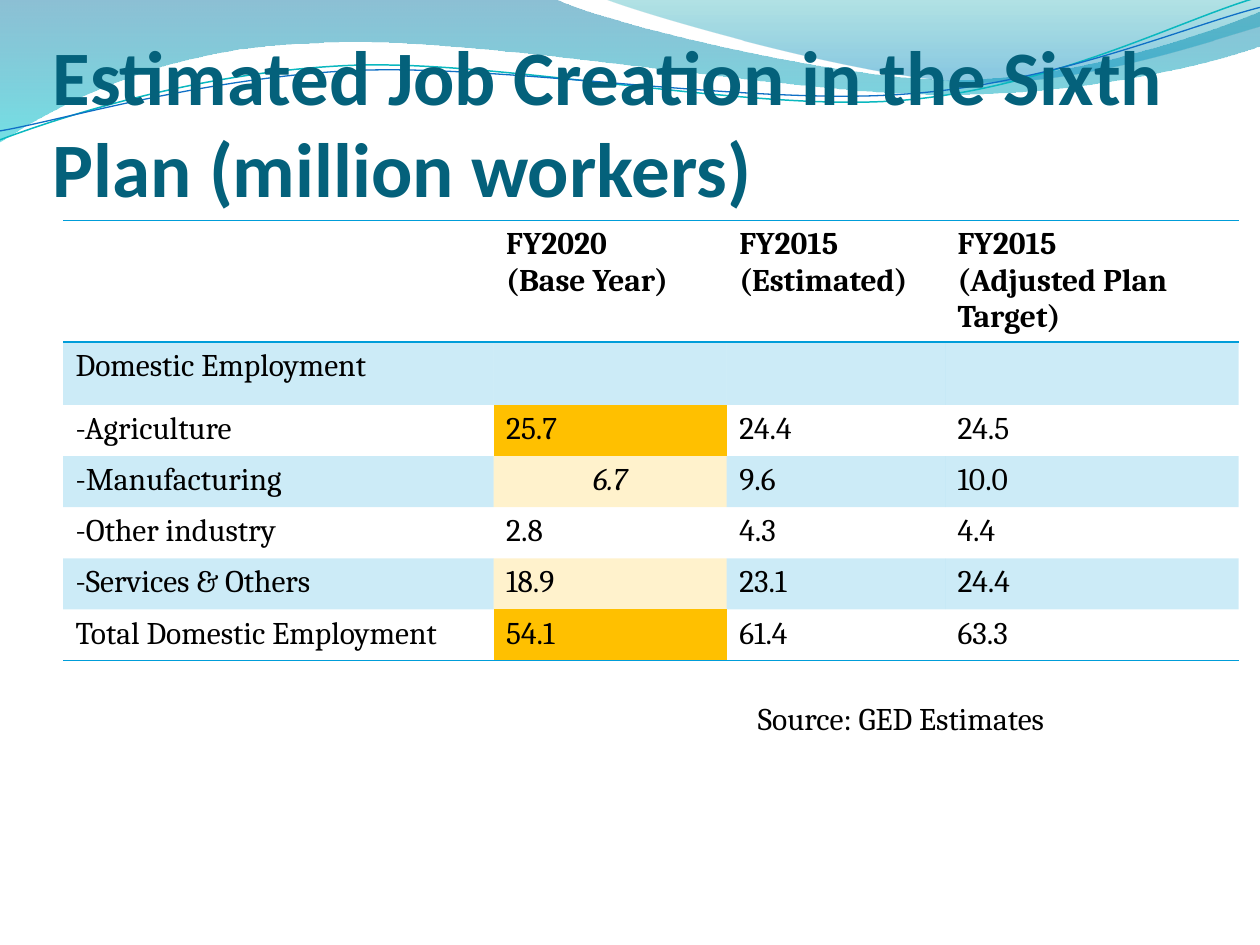
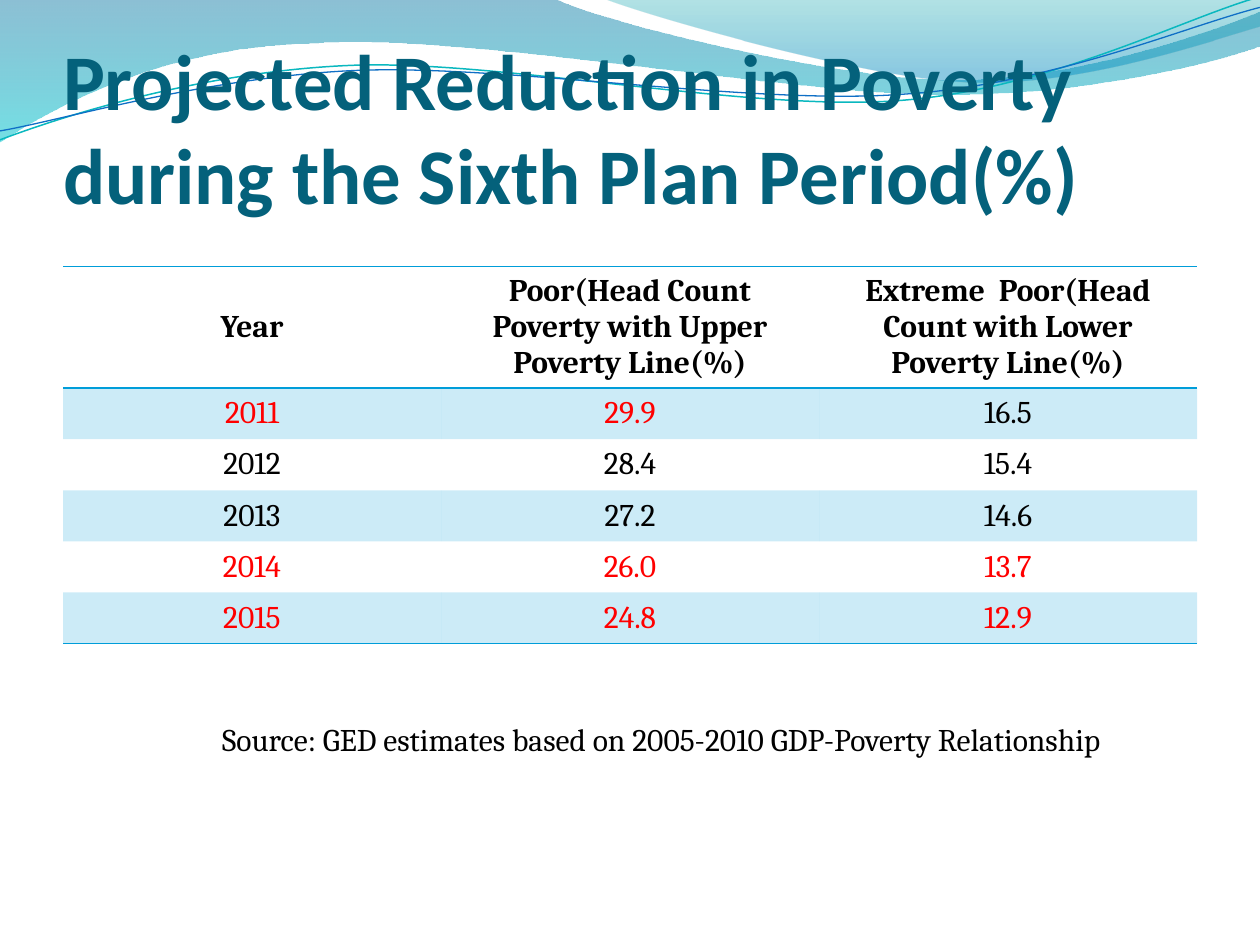
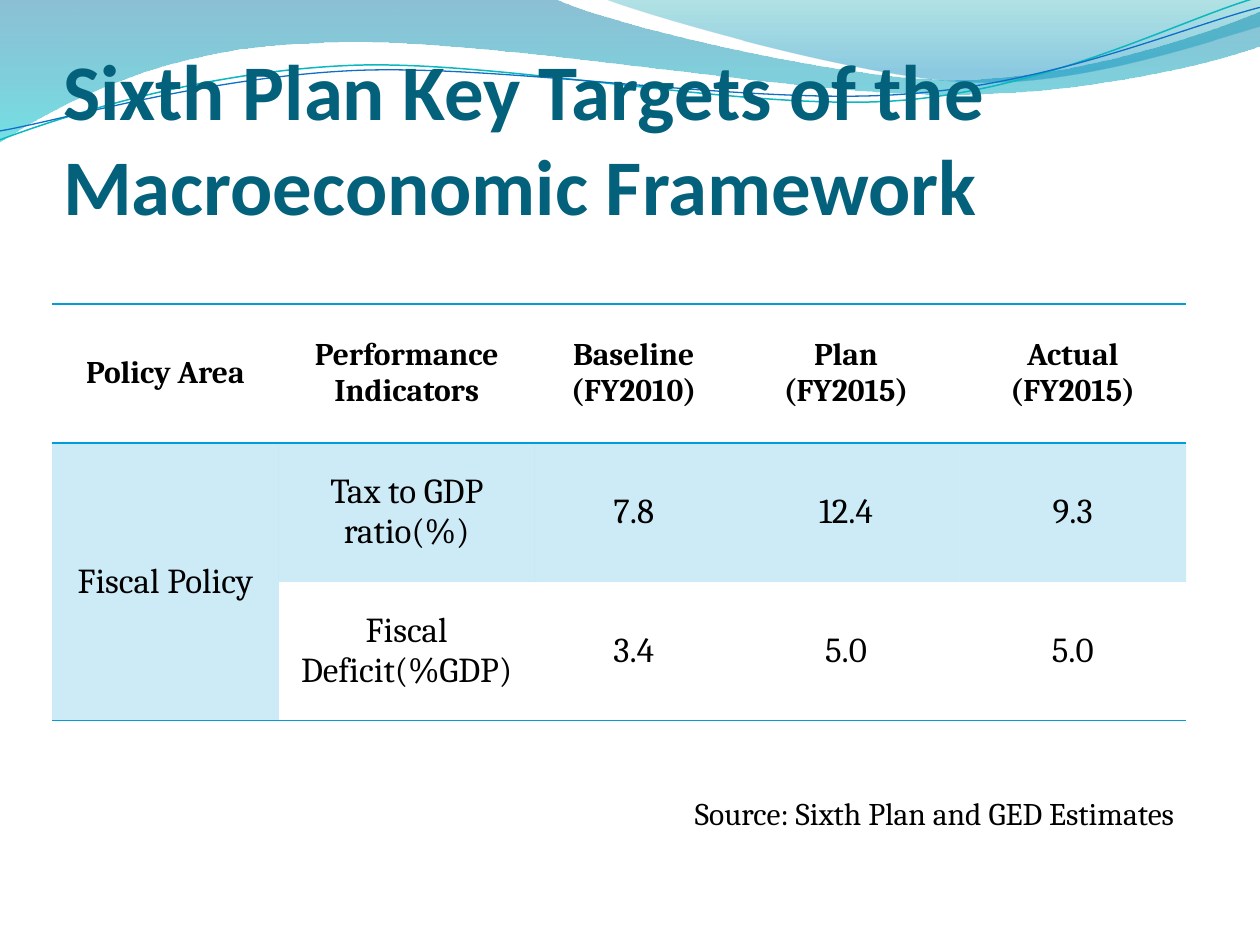
from dataclasses import dataclass

from lxml import etree
from pptx import Presentation
from pptx.dml.color import RGBColor
from pptx.enum.text import MSO_ANCHOR, MSO_AUTO_SIZE, PP_ALIGN
from pptx.oxml.ns import qn
from pptx.util import Cm, Pt

LEFT, MID = PP_ALIGN.LEFT, PP_ALIGN.CENTER
TOP, HALF, LOW = MSO_ANCHOR.TOP, MSO_ANCHOR.MIDDLE, MSO_ANCHOR.BOTTOM
FIXED, GROW = MSO_AUTO_SIZE.NONE, MSO_AUTO_SIZE.SHAPE_TO_FIT_TEXT

BLACK = RGBColor(0x00, 0x00, 0x00)
RED = RGBColor(0xFF, 0x00, 0x00)
GOLD = RGBColor(0xFF, 0xC0, 0x00)
SKY = RGBColor(0x00, 0x9D, 0xD9)
INK = RGBColor(0x04, 0x61, 0x7B)
BLUE = RGBColor(0x00, 0x74, 0xA1)
AQUA = RGBColor(0x00, 0xC6, 0xCF)
SEA = RGBColor(0x00, 0xA1, 0xA9)
AZURE = RGBColor(0x00, 0x8B, 0xBF)
TEAL = RGBColor(0x0A, 0xB8, 0xBF)
NAVY = RGBColor(0x0F, 0x6F, 0xC6)

HEAD_FONT, BODY_FONT = "Calibri", "Cambria"
PLAIN_GRID = "{2D5ABB26-0587-4C30-8999-92F81FD0307C}"
TINT = 20  # opacity of banded rows, in percent

Point = tuple[float, float]
Spot = tuple[int, int]


@dataclass
class Stop:
    place: float
    color: RGBColor
    alpha: int


@dataclass
class Wave:
    """A curve in cm; a step of one point is a line, of three a Bézier."""
    start: Point
    steps: list[tuple[Point, ...]]
    stops: tuple[Stop, ...] = ()
    color: RGBColor = BLACK
    width: float = 0


@dataclass
class Grid:
    left: float
    top: float
    cols: list[float]
    rows: list[float]
    text: list[list[str]]
    align: PP_ALIGN = MID
    anchor: MSO_ANCHOR = TOP
    size: int = 18
    red: tuple[Spot, ...] = ()
    gold: tuple[Spot, ...] = ()
    slant: tuple[Spot, ...] = ()
    merge: tuple[Spot, ...] = ()


@dataclass
class Page:
    title: str
    box: tuple[float, float, float, float]
    size: int
    grid: Grid
    note: str
    note_box: tuple[float, float, float, float]


WAVES = [
    Wave((0, 0), [
        ((11.18, -0.03),),
        ((12.09, 0.43), (16.87, 1.6), (19.25, 1.6)),
        ((21.67, 1.6), (24.33, 0.66), (25.4, 0.23)),
        ((25.43, 0.91),),
        ((24.97, 1.12), (22.1, 1.93), (18.95, 1.9)),
        ((15.8, 1.9), (9.7, 0.71), (6.53, 0.86)),
        ((3.28, 0.91), (1.17, 2.11), (-0.03, 2.87)),
        ((0, 0),),
    ], stops=(Stop(0, BLUE, 45), Stop(1, AQUA, 55))),
    Wave((12.17, -0.03), [
        ((12.93, 0.28), (17.32, 1.57), (19.53, 1.65)),
        ((21.74, 1.75), (24.41, 0.81), (25.4, 0.53)),
        ((25.4, 0),),
        ((12.17, -0.03),),
    ], stops=(Stop(0, SEA, 30), Stop(0.8, AZURE, 45))),
    Wave((0, 2.82), [
        ((1.22, 2.36), (4.01, 1.45), (7.04, 1.32)),
        ((10.03, 1.19), (15.06, 2.26), (18.11, 2.03)),
        ((21.16, 1.8), (23.83, 0.38), (25.35, -0.05)),
    ], color=TEAL, width=0.85),
    Wave((0, 2.64), [
        ((1.19, 2.44), (4.17, 1.55), (7.19, 1.42)),
        ((10.24, 1.3), (15.16, 2.13), (18.21, 1.9)),
        ((21.23, 1.7), (23.9, 0.53), (25.4, 0.15)),
    ], color=NAVY, width=0.75),
]

PAGES = [
    Page(
        "Estimated Job Creation in the Sixth Plan (million workers)",
        (1.06, 0.64, 22.86, 3.65), 44,
        Grid(1.27, 4.44, [8.68, 4.7, 4.4, 5.92], [1.03, 1.27] + [1.03] * 5, [
            ["", "FY2020\n(Base Year)", "FY2015\n(Estimated)",
             "FY2015\n(Adjusted Plan Target)"],
            ["Domestic Employment", "", "", ""],
            ["-Agriculture", "25.7", "24.4", "24.5"],
            ["-Manufacturing", "6.7", "9.6", "10.0"],
            ["-Other industry", "2.8", "4.3", "4.4"],
            ["-Services & Others", "18.9", "23.1", "24.4"],
            ["Total Domestic Employment", "54.1", "61.4", "63.3"],
        ], align=LEFT, gold=((2, 1), (3, 1), (5, 1), (6, 1)),
            slant=((3, 1),)),
        "Source: GED Estimates", (15.03, 13.97, 6.86, 1.03)),
    Page(
        "Projected Reduction in Poverty during the Sixth Plan Period(%)",
        (1.27, 0.64, 22.86, 3.81), 45,
        Grid(1.27, 5.37, [7.62] * 3, [1.03] * 6, [
            ["Year", "Poor(Head Count Poverty with Upper Poverty Line(%)",
             "Extreme  Poor(Head Count with Lower Poverty Line(%)"],
            ["2011", "29.9", "16.5"],
            ["2012", "28.4", "15.4"],
            ["2013", "27.2", "14.6"],
            ["2014", "26.0", "13.7"],
            ["2015", "24.8", "12.9"],
        ], anchor=HALF, red=((1, 0), (1, 1), (4, 0), (4, 1), (4, 2),
                             (5, 0), (5, 1), (5, 2))),
        "Source: GED estimates based on 2005-2010 GDP-Poverty Relationship",
        (4.23, 14.4, 19.68, 1.03)),
    Page(
        "Sixth Plan Key Targets of the Macroeconomic Framework",
        (1.27, 0.85, 23.29, 3.81), 45,
        Grid(1.05, 6.13, [4.57, 5.16, 3.99, 4.57, 4.57], [2.8] * 3, [
            ["Policy Area", "Performance Indicators", "Baseline\n(FY2010)",
             "Plan\n(FY2015)", "Actual\n(FY2015)"],
            ["Fiscal Policy", "Tax to GDP ratio(%)", "7.8", "12.4", "9.3"],
            ["", "Fiscal Deficit(%GDP)", "3.4", "5.0", "5.0"],
        ], anchor=HALF, size=20, merge=((1, 0), (2, 0))),
        "Source: Sixth Plan and GED Estimates", (13.76, 15.88, 11, 1.03)),
]


# Text and colour helpers
def write(frame, text: str, size: int, color: RGBColor = BLACK,
          font: str = BODY_FONT, bold: bool = False, slant: bool = False,
          align: PP_ALIGN = LEFT) -> None:
    for i, line in enumerate(text.split("\n")):
        para = frame.add_paragraph() if i else frame.paragraphs[0]
        para.alignment = align
        run = para.add_run()
        run.text = line
        run.font.name, run.font.size = font, Pt(size)
        run.font.bold, run.font.italic = bold, slant
        run.font.color.rgb = color


def fade(node, alphas: list[int]) -> None:
    for color, alpha in zip(node.iter(qn("a:srgbClr")), alphas):
        etree.SubElement(color, qn("a:alpha"), val=str(alpha * 1000))


def rule(props, side: str) -> None:
    line = etree.Element(qn(f"a:{side}"), w=str(Pt(1)))
    solid = etree.SubElement(line, qn("a:solidFill"))
    etree.SubElement(solid, qn("a:srgbClr"), val=str(SKY))
    props.insert(0, line)


# Waves shared by all slides, kept on the master
def bend(shape, wave: Wave) -> None:
    """Join the line pieces of each three-point step into one curve."""
    lines = iter(list(shape.element.iter(qn("a:lnTo"))))
    for step in wave.steps:
        parts = [next(lines) for _ in step]
        if len(parts) == 3:
            curve = etree.Element(qn("a:cubicBezTo"))
            parts[0].addprevious(curve)
            for part in parts:
                curve.append(part[0])
                part.getparent().remove(part)


def draw_wave(slide, master, wave: Wave) -> None:
    pen = slide.shapes.build_freeform(*map(Cm, wave.start))
    pen.add_line_segments(
        [(Cm(x), Cm(y)) for step in wave.steps for x, y in step],
        close=bool(wave.stops))
    shape = pen.convert_to_shape()
    bend(shape, wave)
    shape.shadow.inherit = False
    if wave.stops:
        shape.fill.gradient()
        shape.fill.gradient_angle = 270
        for slot, stop in zip(shape.fill.gradient_stops, wave.stops):
            slot.position, slot.color.rgb = stop.place, stop.color
        fade(shape.element, [stop.alpha for stop in wave.stops])
        shape.line.fill.background()
    else:
        shape.fill.background()
        shape.line.color.rgb = wave.color
        shape.line.width = Pt(wave.width)
    master.shapes.element.append(shape.element)


# Tables
def draw_grid(slide, grid: Grid) -> None:
    count = len(grid.rows)
    frame = slide.shapes.add_table(
        count, len(grid.cols), Cm(grid.left), Cm(grid.top),
        Cm(sum(grid.cols)), Cm(sum(grid.rows)))
    table = frame.table
    table.first_row = table.horz_banding = False
    frame.element.find(".//" + qn("a:tableStyleId")).text = PLAIN_GRID
    for col, width in zip(table.columns, grid.cols):
        col.width = Cm(width)
    for row, height in zip(table.rows, grid.rows):
        row.height = Cm(height)
    if grid.merge:
        first, last = grid.merge
        table.cell(*first).merge(table.cell(*last))
    for r, texts in enumerate(grid.text):
        for c, text in enumerate(texts):
            draw_cell(table.cell(r, c), grid, (r, c), text)


def draw_cell(cell, grid: Grid, spot: Spot, text: str) -> None:
    head, band = spot[0] == 0, spot[0] % 2 == 1
    slant = spot in grid.slant
    cell.vertical_anchor = grid.anchor
    if text:
        write(cell.text_frame, text, 18 if head else grid.size,
              RED if spot in grid.red else BLACK, bold=head, slant=slant,
              align=MID if slant else grid.align)
    props = cell._tc.get_or_add_tcPr()
    if band or spot in grid.gold:
        cell.fill.solid()
        cell.fill.fore_color.rgb = GOLD if spot in grid.gold else SKY
        if band:
            fade(props, [TINT])
    else:
        cell.fill.background()
    if head or spot[0] + cell.span_height == len(grid.rows):
        rule(props, "lnB")
    if head:
        rule(props, "lnT")


# Slides
def draw_page(slide, page: Page) -> None:
    title = slide.shapes.title
    title.left, title.top, title.width, title.height = map(Cm, page.box)
    frame = title.text_frame
    frame.margin_left = frame.margin_right = frame.margin_bottom = 0
    frame.margin_top = Cm(0.13)
    frame.vertical_anchor, frame.auto_size = LOW, FIXED
    frame.word_wrap = True
    write(frame, page.title, page.size, INK, HEAD_FONT, bold=True)

    draw_grid(slide, page.grid)

    note = slide.shapes.add_textbox(*map(Cm, page.note_box)).text_frame
    note.word_wrap, note.auto_size = False, GROW
    write(note, page.note, 18)


def main() -> None:
    deck = Presentation()
    deck.slide_width, deck.slide_height = Cm(25.4), Cm(19.05)
    slides = [deck.slides.add_slide(deck.slide_layouts[5]) for _ in PAGES]
    for wave in WAVES:
        draw_wave(slides[0], deck.slide_master, wave)
    for slide, page in zip(slides, PAGES):
        draw_page(slide, page)
    deck.save("out.pptx")


if __name__ == "__main__":
    main()
